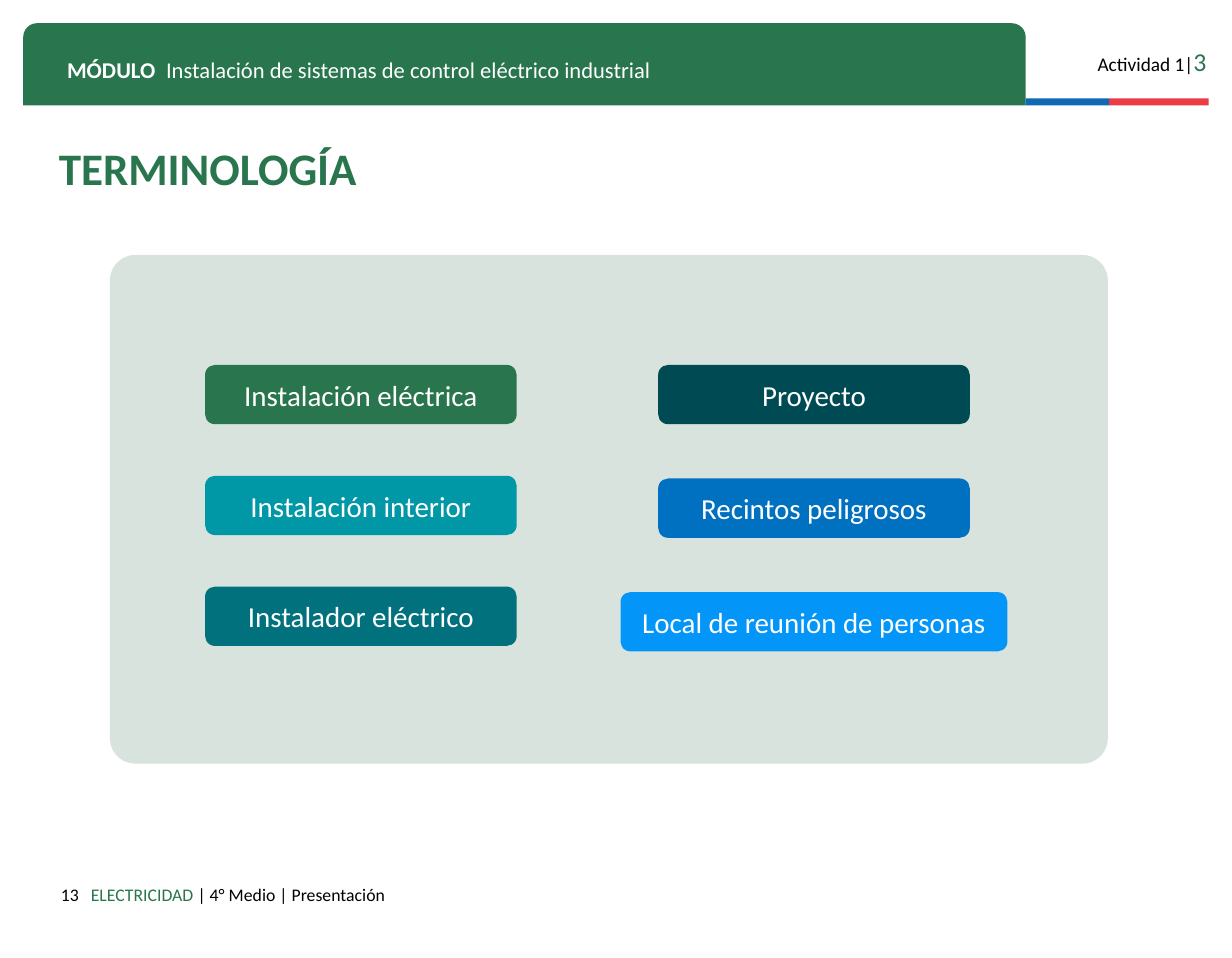
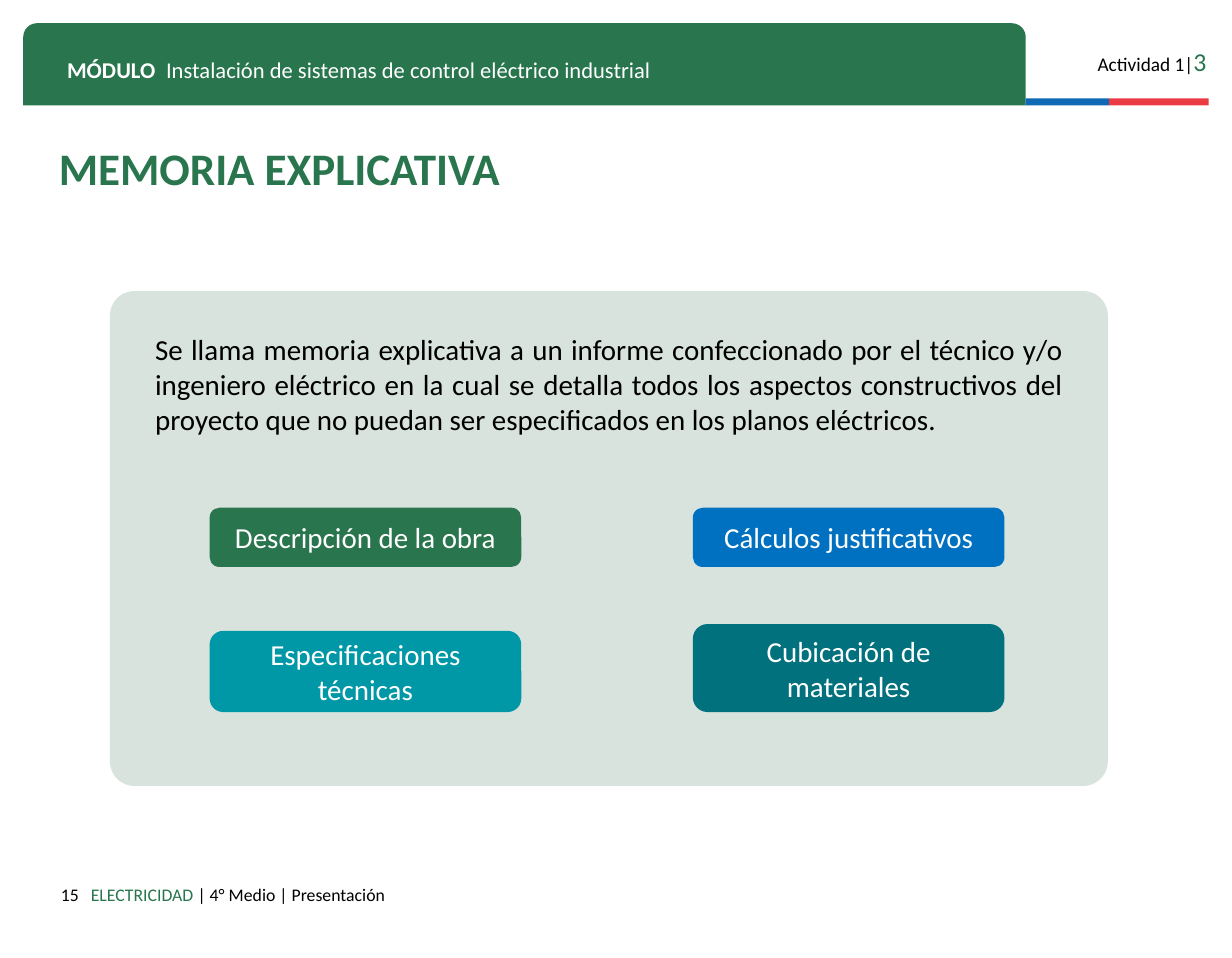
from dataclasses import dataclass

from lxml import etree
from pptx import Presentation
from pptx.dml.color import RGBColor
from pptx.enum import shapes, text
from pptx.oxml import ns
from pptx.util import Cm, Pt


@dataclass(frozen=True)
class Theme:
    font: str = "Calibri"
    green: str = "29754D"
    aqua: str = "0097A7"
    teal: str = "00717D"
    deep: str = "004B53"
    blue: str = "0070C0"
    sky: str = "0495F9"
    panel: str = "D7E3DC"
    flag_blue: str = "0F69B4"
    flag_red: str = "EB3C46"
    white: str = "FFFFFF"
    black: str = "000000"
    title: int = 28
    body: int = 18
    module: int = 14
    activity: int = 12
    activity_no: int = 16
    footer: int = 11


T = Theme()
KIND = shapes.MSO_SHAPE
ALIGN = text.PP_ALIGN
ANCHOR = text.MSO_ANCHOR
FOOTER = "| 4° Medio | Presentación"
CHIP_W, CHIP_H, CHIP_ROUND = 6.83, 1.3, 0.167


# Basic parts
def add_run(p, words, size, color, bold=False):
    r = p.add_run()
    r.text = words
    r.font.name = T.font
    r.font.size = Pt(size)
    r.font.bold = bold
    r.font.color.rgb = RGBColor.from_string(color)


def write(sp, *runs, align=ALIGN.LEFT, anchor=ANCHOR.TOP, pad=0.25, spacing=None):
    """Fill one paragraph; each run is (words, size, color[, bold])."""
    tf = sp.text_frame
    tf.word_wrap = True
    tf.vertical_anchor = anchor
    tf.margin_left = tf.margin_right = Cm(0.25)
    tf.margin_top = tf.margin_bottom = Cm(pad)
    p = tf.paragraphs[0]
    p.alignment = align
    if spacing:
        p.line_spacing = spacing
    for run in runs:
        add_run(p, *run)
    return p


def add_text(s, x, y, w, h, *runs, **fmt):
    return write(s.shapes.add_textbox(Cm(x), Cm(y), Cm(w), Cm(h)), *runs, **fmt)


def add_block(s, kind, x, y, w, h, color, *adjustments):
    sp = s.shapes.add_shape(kind, Cm(x), Cm(y), Cm(w), Cm(h))
    for i, value in enumerate(adjustments):
        sp.adjustments[i] = value
    sp.shadow.inherit = False
    sp.fill.solid()
    sp.fill.fore_color.rgb = RGBColor.from_string(color)
    sp.line.fill.background()
    return sp


def add_tab_stop(p, pos):
    tabs = etree.SubElement(p._p.get_or_add_pPr(), ns.qn("a:tabLst"))
    etree.SubElement(tabs, ns.qn("a:tab"), pos=str(Cm(pos)), algn="l")


# Regions shared by the slides
def add_header(s, x, y):
    band_w, band_h, stripe_h = 21.97, 1.8, 0.15
    add_block(s, KIND.ROUND_2_SAME_RECTANGLE, x, y, band_w, band_h, T.green, 0.167, 0)

    # Two-colour stripe beside the band
    left = x + band_w
    for color, w in ((T.flag_blue, 1.83), (T.flag_red, 2.18)):
        add_block(s, KIND.RECTANGLE, left, y + band_h - stripe_h, w, stripe_h, color)
        left += w

    # Activity and module names
    add_text(s, x + 22.93, y + 0.25, 3.25, 0.97,
             ("Actividad 1|", T.activity, T.black),
             ("3", T.activity_no, T.green), align=ALIGN.RIGHT)
    p = add_text(s, x + 0.71, y + 0.46, 20.68, 0.89,
                 ("MÓDULO", T.module, T.white, True),
                 ("\tInstalación de sistemas de control eléctrico industrial",
                  T.module, T.white))
    add_tab_stop(p, 2.17)


def add_footer(s, x, y, number):
    add_text(s, x, y, 1.47, 0.74, (str(number), T.footer, T.black), align=ALIGN.RIGHT)
    add_text(s, x + 1.23, y, 18.16, 0.97,
             ("ELECTRICIDAD ", T.footer, T.green), (FOOTER, T.footer, T.black))


def add_frame(prs, title, number):
    s = prs.slides.add_slide(prs.slide_layouts[6])
    add_header(s, 0.51, 0.51)
    add_footer(s, 0.51, 19.13, number)
    add_text(s, 1.04, 3.28, 22.15, 0.99, (title, T.title, T.green, True),
             anchor=ANCHOR.MIDDLE, spacing=0.8)
    return s


def add_panel(s, x, y, w, h):
    add_block(s, KIND.ROUNDED_RECTANGLE, x, y, w, h, T.panel, 0.05)


def add_chip_column(s, center, bottom, step, chips):
    """Stack chips on equally spaced baselines; a chip is (words, color[, w, h])."""
    for i, (words, color, *size) in enumerate(chips):
        w, h = size or (CHIP_W, CHIP_H)
        sp = add_block(s, KIND.ROUNDED_RECTANGLE, center - w / 2,
                       bottom + i * step - h, w, h, color, CHIP_ROUND)
        write(sp, (words, T.body, T.white), align=ALIGN.CENTER,
              anchor=ANCHOR.MIDDLE, pad=0.13)


# Slides
def add_terminology(prs, x=2.41, y=5.59):
    s = add_frame(prs, "TERMINOLOGÍA", 13)
    add_panel(s, x, y, 21.87, 11.15)
    add_chip_column(s, x + 5.5, y + 3.71, 2.43, [
        ("Instalación eléctrica", T.green),
        ("Instalación interior", T.aqua),
        ("Instalador eléctrico", T.teal),
    ])
    add_chip_column(s, x + 15.43, y + 3.71, 2.49, [
        ("Proyecto", T.deep),
        ("Recintos peligrosos", T.blue),
        ("Local de reunión de personas", T.sky, 8.48, CHIP_H),
    ])


def add_report(prs, x=2.41, y=6.38):
    s = add_frame(prs, "MEMORIA EXPLICATIVA", 15)
    add_panel(s, x, y, 21.87, 10.85)
    add_text(s, x + 0.74, y + 0.76, 20.4, 2.57,
             ("Se llama memoria explicativa a un informe confeccionado por el técnico "
              "y/o ingeniero eléctrico en la cual se detalla todos los aspectos "
              "constructivos del proyecto que no puedan ser especificados en los "
              "planos eléctricos.", T.body, T.black),
             align=ALIGN.JUSTIFY, pad=0.13)
    add_chip_column(s, x + 5.6, y + 6.05, 3.18, [
        ("Descripción de la obra", T.green),
        ("Especificaciones técnicas", T.aqua, CHIP_W, 1.78),
    ])
    add_chip_column(s, x + 16.19, y + 6.05, 3.18, [
        ("Cálculos justificativos", T.blue),
        ("Cubicación de materiales", T.teal, CHIP_W, 1.93),
    ])


def main():
    prs = Presentation()
    prs.slide_width, prs.slide_height = Cm(27), Cm(21)
    add_terminology(prs)
    add_report(prs)
    prs.save("out.pptx")


if __name__ == "__main__":
    main()
